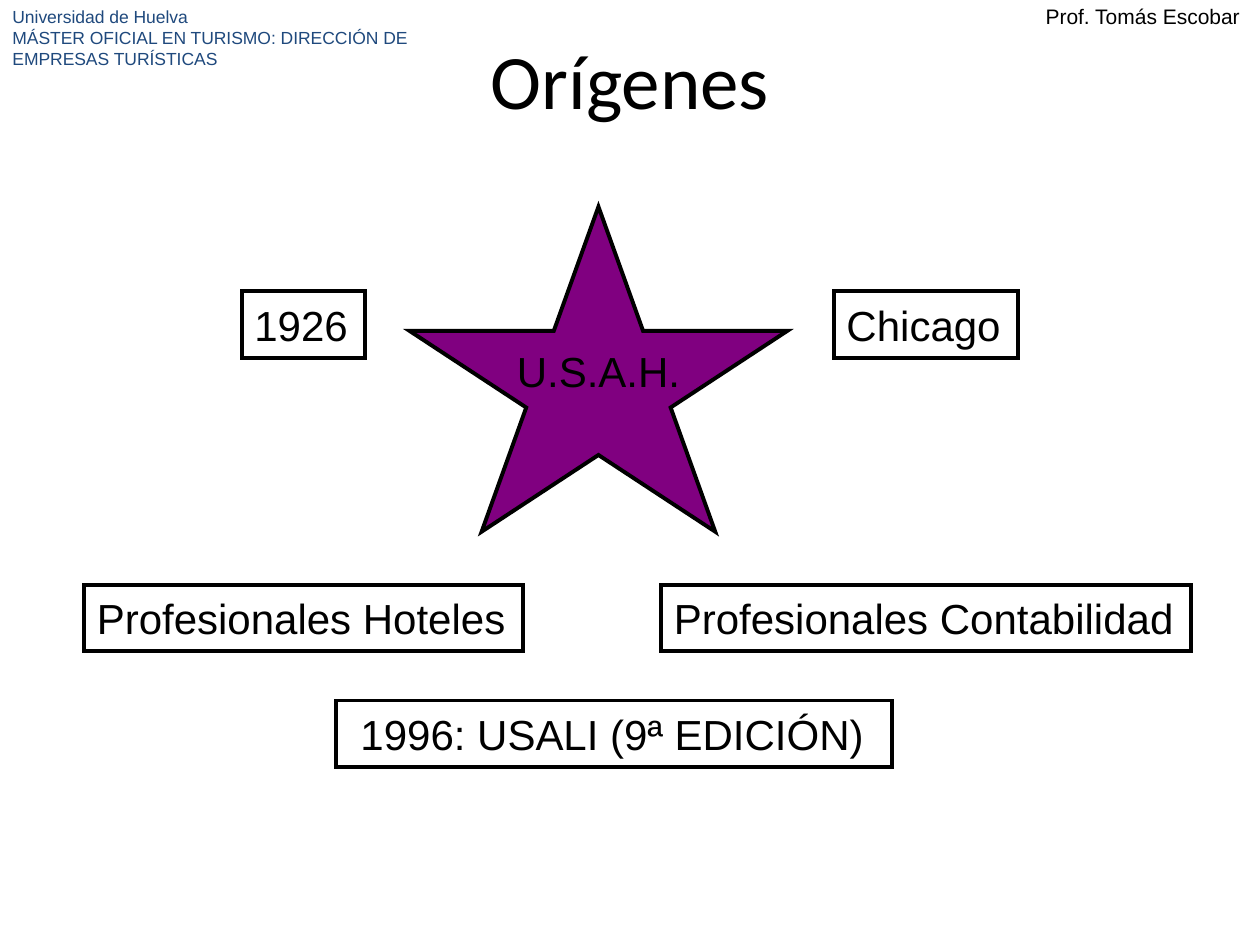
from typing import NamedTuple

from lxml import etree
from pptx import Presentation
from pptx.dml.color import RGBColor
from pptx.enum.shapes import MSO_SHAPE
from pptx.enum.text import MSO_ANCHOR, PP_ALIGN
from pptx.oxml.ns import qn
from pptx.util import Inches, Pt

RECT, STAR = MSO_SHAPE.RECTANGLE, MSO_SHAPE.STAR_5_POINT
TOP, MIDDLE = MSO_ANCHOR.TOP, MSO_ANCHOR.MIDDLE
LEFT, CENTER = PP_ALIGN.LEFT, PP_ALIGN.CENTER

BLACK = RGBColor(0x00, 0x00, 0x00)
NAVY = RGBColor(0x1F, 0x49, 0x7D)
PURPLE = RGBColor(0x80, 0x00, 0x80)

CELL = Inches(0.1)  # the slide is a grid of 100 columns by 75 rows
COLS, ROWS = 100, 75
BOX_ROWS = 5.3
DATE_ROW, PEOPLE_ROW, EDITION_ROW = 23.1, 46.4, 55.6


class Area(NamedTuple):
    col: float
    row: float
    cols: float
    rows: float

    def emu(self) -> list[int]:
        return [round(n * CELL) for n in self]


class Box(NamedTuple):
    text: str
    col: float
    row: float
    cols: float


BOXES = [
    Box("1926", 19.2, DATE_ROW, 9.8),
    Box("Chicago", 66.2, DATE_ROW, 14.6),
    Box("Profesionales Hoteles", 6.7, PEOPLE_ROW, 34.8),
    Box("Profesionales Contabilidad", 52.5, PEOPLE_ROW, 42),
    Box(" 1996: USALI (9ª EDICIÓN)", 26.7, EDITION_ROW, 44.1),
]


def write(shape, text: str, *, size: float = 24, font: str = "Arial",
          color: RGBColor = BLACK, align=LEFT, anchor=MIDDLE,
          wrap: bool = True) -> None:
    tf = shape.text_frame
    tf.word_wrap = wrap
    tf.vertical_anchor = anchor
    p = tf.paragraphs[0]
    p.text = text
    p.alignment = align
    for r in p.runs:
        r.font.size = Pt(size)
        r.font.name = font
        r.font.color.rgb = color


def add_text(s, area: Area, text: str, **style) -> None:
    write(s.shapes.add_textbox(*area.emu()), text, **style)


def add_outlined(s, kind, area: Area, fill: RGBColor | None = None):
    """Add a shape with a black, sharp-cornered outline; no fill by default."""
    sp = s.shapes.add_shape(kind, *area.emu())
    sp.shadow.inherit = False
    if fill is None:
        sp.fill.background()
    else:
        sp.fill.solid()
        sp.fill.fore_color.rgb = fill
    sp.line.color.rgb = BLACK
    sp.line.width = Pt(2.25)
    etree.SubElement(sp.line._get_or_add_ln(), qn("a:miter"), lim="800000")
    return sp


def main() -> None:
    prs = Presentation()
    prs.slide_width, prs.slide_height = COLS * CELL, ROWS * CELL
    s = prs.slides.add_slide(prs.slide_layouts[6])

    add_text(s, Area(82, -0.2, 17.7, 3), "Prof. Tomás Escobar",
             size=12, anchor=TOP, wrap=False)
    add_text(s, Area(0, 0, 33.9, 8.7),
             "Universidad de Huelva\v"
             "MÁSTER OFICIAL EN TURISMO: DIRECCIÓN DE EMPRESAS TURÍSTICAS",
             size=10, color=NAVY, anchor=TOP)
    add_text(s, Area(0, 0, COLS, 12.5), "Orígenes",
             size=44, font="Calibri", align=CENTER)

    for box in BOXES:
        sp = add_outlined(s, RECT, Area(box.col, box.row, box.cols, BOX_ROWS))
        write(sp, box.text)

    add_outlined(s, STAR, Area(32.5, 16.4, 30, 25.8), PURPLE)
    add_text(s, Area(40, 26.9, 15, 5), "U.S.A.H.", align=CENTER, wrap=False)

    prs.save("out.pptx")


if __name__ == "__main__":
    main()
